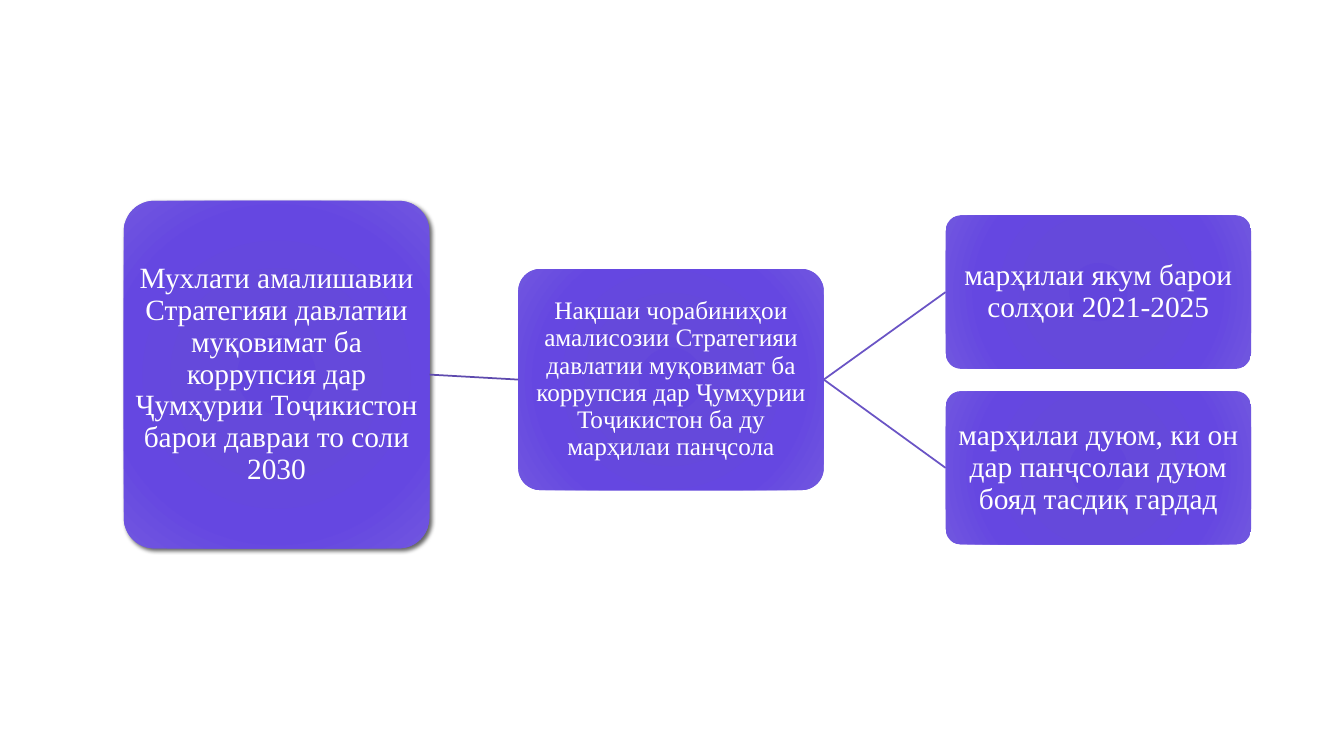
"""Build a slide showing the stages of an anti-corruption strategy."""
from lxml import etree
from pptx import Presentation, oxml
from pptx import util as u
from pptx.dml import color
from pptx.enum import shapes, text
from pptx.oxml import ns

HUES = {"core": "6245DC", "mid": "6549DB", "outer": "6547E1", "edge": "7157DF",
        "trunk": "5E4AAE", "branch": "6A54C5", "text": "FFFFFF", "shade": "000000"}
STOPS = {"core": 0, "mid": 34, "outer": 70, "edge": 100}
FONT = "Times New Roman"
WIDTH = 7.7


def rgb(name):
    """Return a named colour."""
    return color.RGBColor.from_string(HUES[name])


def glow(box):
    """Fill a box with the radial gradient."""
    stops = "".join(f'<a:gs pos="{pos * 1000}"><a:srgbClr val="{HUES[name]}"/></a:gs>'
                    for name, pos in STOPS.items())
    fill = oxml.parse_xml(
        f'<a:gradFill {ns.nsdecls("a")} rotWithShape="1"><a:gsLst>{stops}</a:gsLst>'
        '<a:path path="circle"><a:fillToRect l="100000" t="100000" r="100000" b="100000"/>'
        '</a:path></a:gradFill>')
    box.fill.background()
    props = box.element.spPr
    props.replace(props.find(ns.qn("a:noFill")), fill)


def shade(box):
    """Give a box a soft outer shadow."""
    effects = box.element.spPr.find(ns.qn("a:effectLst"))
    effects.append(oxml.parse_xml(
        f'<a:outerShdw {ns.nsdecls("a")} blurRad="{u.Pt(3)}" dist="{u.Pt(2)}" '
        f'dir="2700000" rotWithShape="0"><a:srgbClr val="{HUES["shade"]}">'
        '<a:alpha val="60000"/></a:srgbClr></a:outerShdw>'))


def add_box(slide, left, top, height, words, size=21):
    """Add a rounded box with centred text."""
    box = slide.shapes.add_shape(shapes.MSO_SHAPE.ROUNDED_RECTANGLE,
                                 u.Cm(left), u.Cm(top), u.Cm(WIDTH), u.Cm(height))
    box.adjustments[0] = 0.1
    box.shadow.inherit = False
    box.line.fill.background()
    glow(box)
    frame = box.text_frame
    frame.text = words
    frame.word_wrap = True
    frame.vertical_anchor = text.MSO_ANCHOR.MIDDLE
    frame.margin_left = frame.margin_right = u.Cm(0.03)
    frame.margin_top = frame.margin_bottom = u.Cm(0.03)
    para = frame.paragraphs[0]
    para.alignment = text.PP_ALIGN.CENTER
    para.line_spacing = 0.9
    font = para.runs[0].font
    font.name, font.size = FONT, u.Pt(size)
    font.color.rgb = rgb("text")
    return box


def link(slide, start, end, hue):
    """Join the right side of one box to the left side of another."""
    line = slide.shapes.add_connector(shapes.MSO_CONNECTOR.STRAIGHT, 0, 0, 0, 0)
    line.begin_connect(start, 3)
    line.end_connect(end, 1)
    line.line.color.rgb = rgb(hue)
    line.line.width = u.Pt(1.25)
    etree.SubElement(line.element.spPr, ns.qn("a:effectLst"))


def main():
    """Build and save the slide."""
    deck = Presentation()
    deck.slide_width, deck.slide_height = u.Cm(33.87), u.Cm(19.05)
    slide = deck.slides.add_slide(deck.slide_layouts[6])
    term = add_box(slide, 3.12, 5.06, 8.76,
                   "Мухлати амалишавии Стратегияи давлатии муқовимат ба коррупсия "
                   "дар Ҷумҳурии Тоҷикистон барои давраи то соли 2030")
    shade(term)
    plan = add_box(slide, 13.06, 6.78, 5.57,
                   "Нақшаи чорабиниҳои амалисозии Стратегияи давлатии муқовимат ба "
                   "коррупсия дар Ҷумҳурии Тоҷикистон ба ду марҳилаи панҷсола", 18)
    link(slide, term, plan, "trunk")
    stages = ["марҳилаи якум барои солҳои 2021-2025",
              "марҳилаи дуюм, ки он дар панҷсолаи дуюм бояд тасдиқ гардад"]
    for row, words in enumerate(stages):
        stage = add_box(slide, 23.83, 5.43 + row * 4.43, 3.86, words)
        link(slide, plan, stage, "branch")
    deck.save("out.pptx")


if __name__ == "__main__":
    main()
